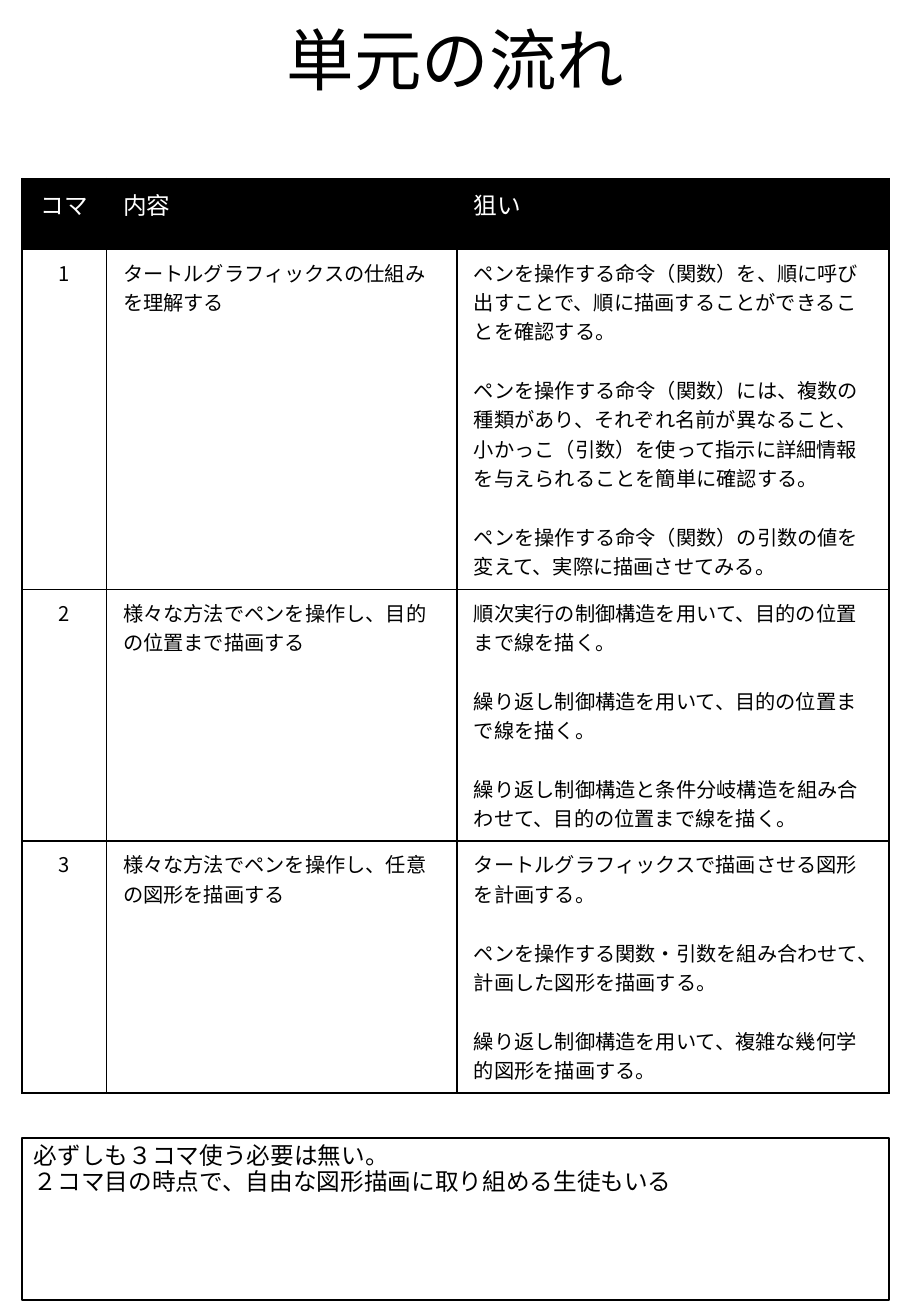
from pptx import Presentation
from pptx.dml.color import RGBColor
from pptx.enum.shapes import MSO_SHAPE
from pptx.enum.text import MSO_ANCHOR, PP_ALIGN
from pptx.oxml import parse_xml
from pptx.oxml.ns import nsdecls, qn
from pptx.util import Pt

BLACK = RGBColor(0x00, 0x00, 0x00)
WHITE = RGBColor(0xFF, 0xFF, 0xFF)
FONT = "Noto Sans CJK JP"
LEFT, CENTER = PP_ALIGN.LEFT, PP_ALIGN.CENTER
TOP, BOTTOM = MSO_ANCHOR.TOP, MSO_ANCHOR.BOTTOM
RECTANGLE = MSO_SHAPE.RECTANGLE

PAGE_WIDTH, PAGE_HEIGHT = 540, 780
TITLE_BOX = (40, 4.3, 460, 58.3)
TABLE_BOX = (13, 105.8, 514, 542.1)
NOTE_BOX = (13, 674.6, 514, 95.8)

COLUMN_WIDTHS = (50, 208, 256)
ROW_HEIGHTS = (42, 201.5, 149.3, 149.3)
LINE_HEIGHT = 17.4

HEADINGS = ("コマ", "内容", "狙い")
LESSONS = (
    ("1", "タートルグラフィックスの仕組みを理解する", (
        "ペンを操作する命令（関数）を、順に呼び出すことで、順に描画することができることを確認する。",
        "ペンを操作する命令（関数）には、複数の種類があり、それぞれ名前が異なること、"
        "小かっこ（引数）を使って指示に詳細情報を与えられることを簡単に確認する。",
        "ペンを操作する命令（関数）の引数の値を変えて、実際に描画させてみる。")),
    ("2", "様々な方法でペンを操作し、目的の位置まで描画する", (
        "順次実行の制御構造を用いて、目的の位置まで線を描く。",
        "繰り返し制御構造を用いて、目的の位置まで線を描く。",
        "繰り返し制御構造と条件分岐構造を組み合わせて、目的の位置まで線を描く。")),
    ("3", "様々な方法でペンを操作し、任意の図形を描画する", (
        "タートルグラフィックスで描画させる図形を計画する。",
        "ペンを操作する関数・引数を組み合わせて、計画した図形を描画する。",
        "繰り返し制御構造を用いて、複雑な幾何学的図形を描画する。")),
)
NOTES = ("必ずしも３コマ使う必要は無い。",
         "２コマ目の時点で、自由な図形描画に取り組める生徒もいる")


def write_text(frame, lines, size, color, align=LEFT, spacing=None, gap=0):
    """Fill a text frame with one paragraph per line."""
    frame.word_wrap = True
    frame.text = "\n".join(lines)
    for index, para in enumerate(frame.paragraphs):
        para.alignment = align
        para.line_spacing = spacing
        para.space_before = Pt(gap if index else 0)
        for span in para.runs:
            span.font.name = FONT
            span.font.size = Pt(size)
            span.font.bold = False
            span.font.color.rgb = color
            # East Asian typeface follows the Latin one
            east_asian = parse_xml(f'<a:ea {nsdecls("a")} typeface="{FONT}"/>')
            span.font._element.find(qn("a:latin")).addnext(east_asian)


def add_borders(cell):
    """Draw a thin black line on all four sides of a cell."""
    properties = cell._tc.get_or_add_tcPr()
    for index, side in enumerate(("lnL", "lnR", "lnT", "lnB")):
        properties.insert(index, parse_xml(
            f'<a:{side} {nsdecls("a")} w="{Pt(1)}"><a:solidFill>'
            f'<a:srgbClr val="{BLACK}"/></a:solidFill></a:{side}>'))


def add_title(page, box):
    title = page.shapes.add_textbox(*map(Pt, box))
    title.text_frame.vertical_anchor = BOTTOM
    write_text(title.text_frame, ["単元の流れ"], 40, BLACK, CENTER, 0.9)


def add_lesson_table(page, box):
    rows = [[[heading] for heading in HEADINGS]]
    rows += [[[number], [content], aims] for number, content, aims in LESSONS]
    table = page.shapes.add_table(len(rows), len(HEADINGS), *map(Pt, box)).table
    table.first_row = table.horz_banding = False
    for column, width in zip(table.columns, COLUMN_WIDTHS):
        column.width = Pt(width)
    for row, height in zip(table.rows, ROW_HEIGHTS):
        row.height = Pt(height)

    for row_index, row in enumerate(rows):
        is_header = row_index == 0
        for column_index, lines in enumerate(row):
            cell = table.cell(row_index, column_index)
            cell.margin_left = cell.margin_right = Pt(10)
            cell.margin_top = cell.margin_bottom = Pt(5)
            cell.fill.solid()
            cell.fill.fore_color.rgb = BLACK if is_header else WHITE
            add_borders(cell)
            write_text(cell.text_frame, lines, 14 if is_header else 12,
                       WHITE if is_header else BLACK,
                       CENTER if column_index == 0 else LEFT, gap=LINE_HEIGHT)


def add_note(page, box):
    note = page.shapes.add_shape(RECTANGLE, *map(Pt, box))
    note.shadow.inherit = False
    note.fill.solid()
    note.fill.fore_color.rgb = WHITE
    note.line.color.rgb = BLACK
    note.line.width = Pt(1)
    note.text_frame.vertical_anchor = TOP
    write_text(note.text_frame, NOTES, 14, BLACK, spacing=0.9)


def main():
    deck = Presentation()
    deck.slide_width, deck.slide_height = Pt(PAGE_WIDTH), Pt(PAGE_HEIGHT)
    page = deck.slides.add_slide(deck.slide_layouts[6])
    add_title(page, TITLE_BOX)
    add_lesson_table(page, TABLE_BOX)
    add_note(page, NOTE_BOX)
    deck.save("out.pptx")


if __name__ == "__main__":
    main()
